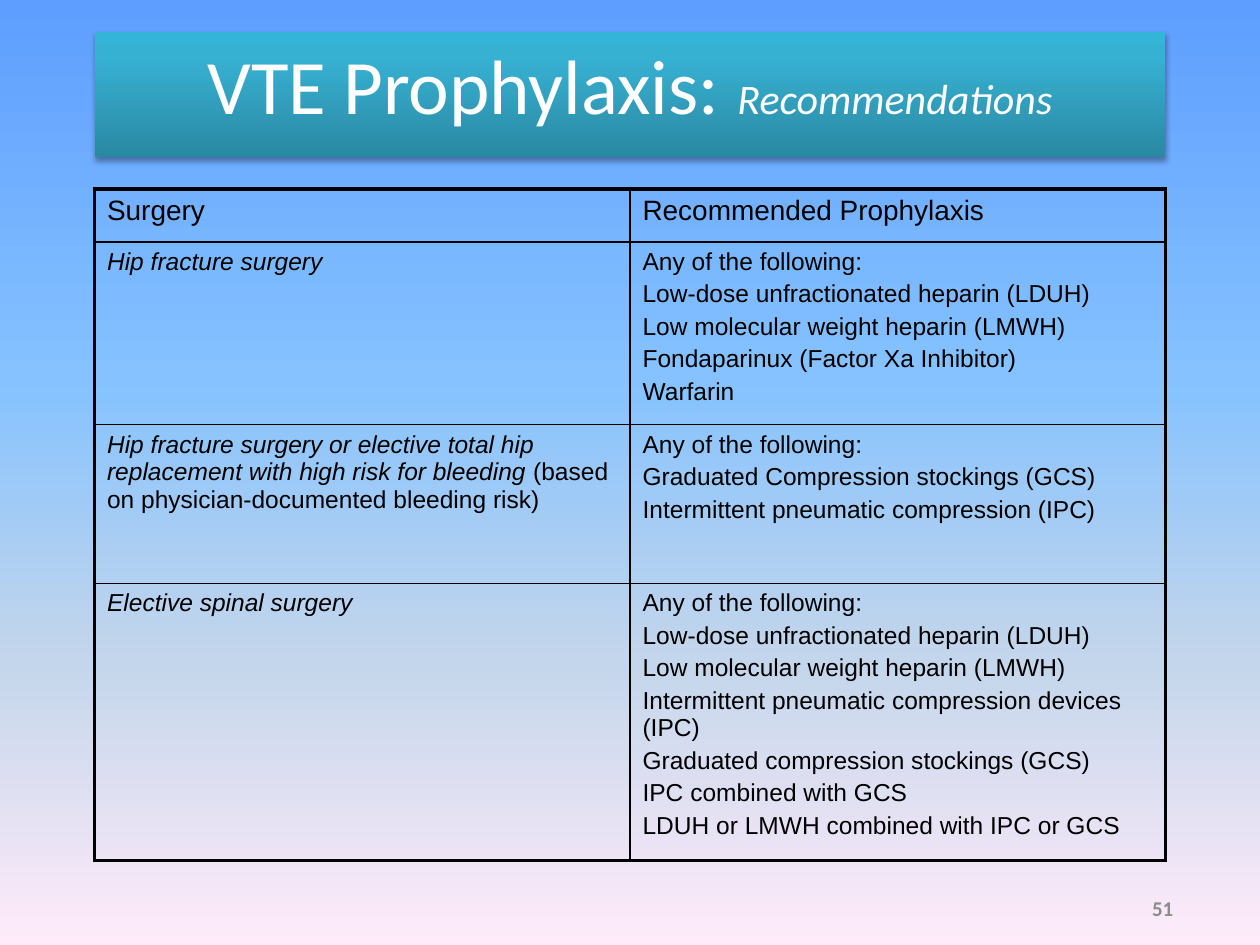
from lxml.etree import SubElement
from pptx import Presentation
from pptx.dml.color import RGBColor
from pptx.enum.text import MSO_ANCHOR, MSO_AUTO_SIZE, PP_ALIGN
from pptx.oxml import parse_xml
from pptx.oxml.ns import nsdecls, qn
from pptx.util import Inches, Pt

THIN, THICK = 1, 2.25
ANY = "Any of the following:"
LDUH = "Low-dose unfractionated heparin (LDUH)"
LMWH = "Low molecular weight heparin (LMWH)"

# Each cell is a list of paragraphs, each paragraph a list of (text, italic) runs.
SURGERIES = [
    [[("Surgery", False)]],
    [[("Hip fracture surgery", True)]],
    [[("Hip fracture surgery or elective total hip replacement "
       "with high risk for bleeding", True),
      (" (based on physician-documented bleeding risk)", False)]],
    [[("Elective spinal surgery", True)]],
]
PROPHYLAXES = [
    ["Recommended Prophylaxis"],
    [ANY, LDUH, LMWH, "Fondaparinux (Factor Xa Inhibitor)", "Warfarin"],
    [ANY, "Graduated Compression stockings (GCS)",
     "Intermittent pneumatic compression (IPC)"],
    [ANY, LDUH, LMWH, "Intermittent pneumatic compression devices (IPC)",
     "Graduated compression stockings (GCS)", "IPC combined with GCS",
     "LDUH or LMWH combined with IPC or GCS"],
]
ROW_HEIGHTS = [0.42, 1.45, 1.26, 1.96]


def color(value):
    return RGBColor.from_string(value)


def gradient(stops, angle):
    marks = "".join(
        f'<a:gs pos="{position * 1000}"><a:srgbClr val="{value}"/></a:gs>'
        for position, value in stops)
    return parse_xml(
        f'<a:gradFill {nsdecls("a")} rotWithShape="1"><a:gsLst>{marks}</a:gsLst>'
        f'<a:lin ang="{angle * 60000}" scaled="0"/></a:gradFill>')


def place(shape, left, top, width, height):
    shape.left, shape.top = Inches(left), Inches(top)
    shape.width, shape.height = Inches(width), Inches(height)


def set_borders(cell, widths):
    """Draw black edges; widths are left, right, top and bottom in points."""
    properties = cell._tc.get_or_add_tcPr()
    for index, (side, width) in enumerate(zip("LRTB", widths)):
        properties.insert(index, parse_xml(
            f'<a:ln{side} {nsdecls("a")} w="{Pt(width)}"><a:solidFill>'
            f'<a:srgbClr val="000000"/></a:solidFill></a:ln{side}>'))


class SlideBuilder:
    title_font = "Calibri"
    table_font = "Arial"

    def __init__(self, page):
        self.page = page

    def add_run(self, para, text, size, font, tint, italic=False, bold=False):
        span = para.add_run()
        span.text = text
        span.font.size = Pt(size)
        span.font.name = font
        span.font.italic = italic
        span.font.bold = bold
        span.font.color.rgb = color(tint)

    def background(self, stops, angle):
        fill = self.page.background.fill
        fill.solid()
        properties = self.page._element.cSld.bg.bgPr
        properties.replace(properties.find(qn("a:solidFill")),
                           gradient(stops, angle))

    def title(self, runs, bounds, stops, angle):
        box = self.page.shapes.title
        place(box, *bounds)
        box._element.spPr.append(gradient(stops, angle))
        box._element.spPr.append(parse_xml(
            f'<a:effectLst {nsdecls("a")}><a:outerShdw blurRad="{Pt(3.1)}" '
            f'dist="{Pt(1.8)}" dir="5400000" rotWithShape="0">'
            '<a:srgbClr val="000000"><a:alpha val="35000"/></a:srgbClr>'
            '</a:outerShdw></a:effectLst>'))
        frame = box.text_frame
        frame.auto_size = MSO_AUTO_SIZE.NONE
        frame.vertical_anchor = MSO_ANCHOR.TOP
        para = frame.paragraphs[0]
        para.alignment = PP_ALIGN.CENTER
        for text, size, italic in runs:
            self.add_run(para, text, size, self.title_font, "FFFFFF", italic)

    def page_number(self, text, bounds):
        box = self.page.shapes.add_textbox(*map(Inches, bounds))
        frame = box.text_frame
        frame.word_wrap = True
        frame.vertical_anchor = MSO_ANCHOR.MIDDLE
        para = frame.paragraphs[0]
        para.alignment = PP_ALIGN.RIGHT
        self.add_run(para, text, 12, self.title_font, "8C8C8C", bold=True)

    def fill_cell(self, cell, paragraphs, size):
        frame = cell.text_frame
        for index, runs in enumerate(paragraphs):
            para = frame.add_paragraph() if index else frame.paragraphs[0]
            spacing = SubElement(para._p.get_or_add_pPr(), qn("a:spcBef"))
            SubElement(spacing, qn("a:spcPct")).set("val", "20000")
            for text, italic in runs:
                self.add_run(para, text, size, self.table_font, "000000", italic)

    def table(self, columns, row_heights, bounds):
        last_row, last_column = len(row_heights) - 1, len(columns) - 1
        holder = self.page.shapes.add_table(
            len(row_heights), len(columns), *map(Inches, bounds))
        grid = holder.table
        grid.first_row = grid.horz_banding = False
        for row, height in enumerate(row_heights):
            grid.rows[row].height = Inches(height)
            for column, cells in enumerate(columns):
                cell = grid.cell(row, column)
                cell.fill.background()
                outer = (column == 0, column == last_column,
                         row == 0, row == last_row)
                set_borders(cell, [THICK if edge else THIN for edge in outer])
                self.fill_cell(cell, cells[row], 14 if row else 16)
        place(holder, *bounds)


def main():
    deck = Presentation()
    deck.slide_width, deck.slide_height = Inches(10), Inches(7.5)
    slide = SlideBuilder(deck.slides.add_slide(deck.slide_layouts[5]))
    slide.background([(0, "5E9EFF"), (40, "85C2FF"),
                      (70, "C4D6EB"), (100, "FFEBFA")], 90)
    slide.page_number("51", (4.83, 7.08, 4.58, 0.25))
    slide.title([("VTE Prophylaxis: ", 44, False), ("Recommendations", 24, True)],
                (0.75, 0.25, 8.5, 1),
                [(0, "2A88A2"), (80, "37B1D2"), (100, "34B4D6")], 270)
    prophylaxes = [[[(line, False)] for line in lines] for lines in PROPHYLAXES]
    slide.table([SURGERIES, prophylaxes], ROW_HEIGHTS, (0.75, 1.5, 8.5, 5.38))
    deck.save("out.pptx")


if __name__ == "__main__":
    main()
